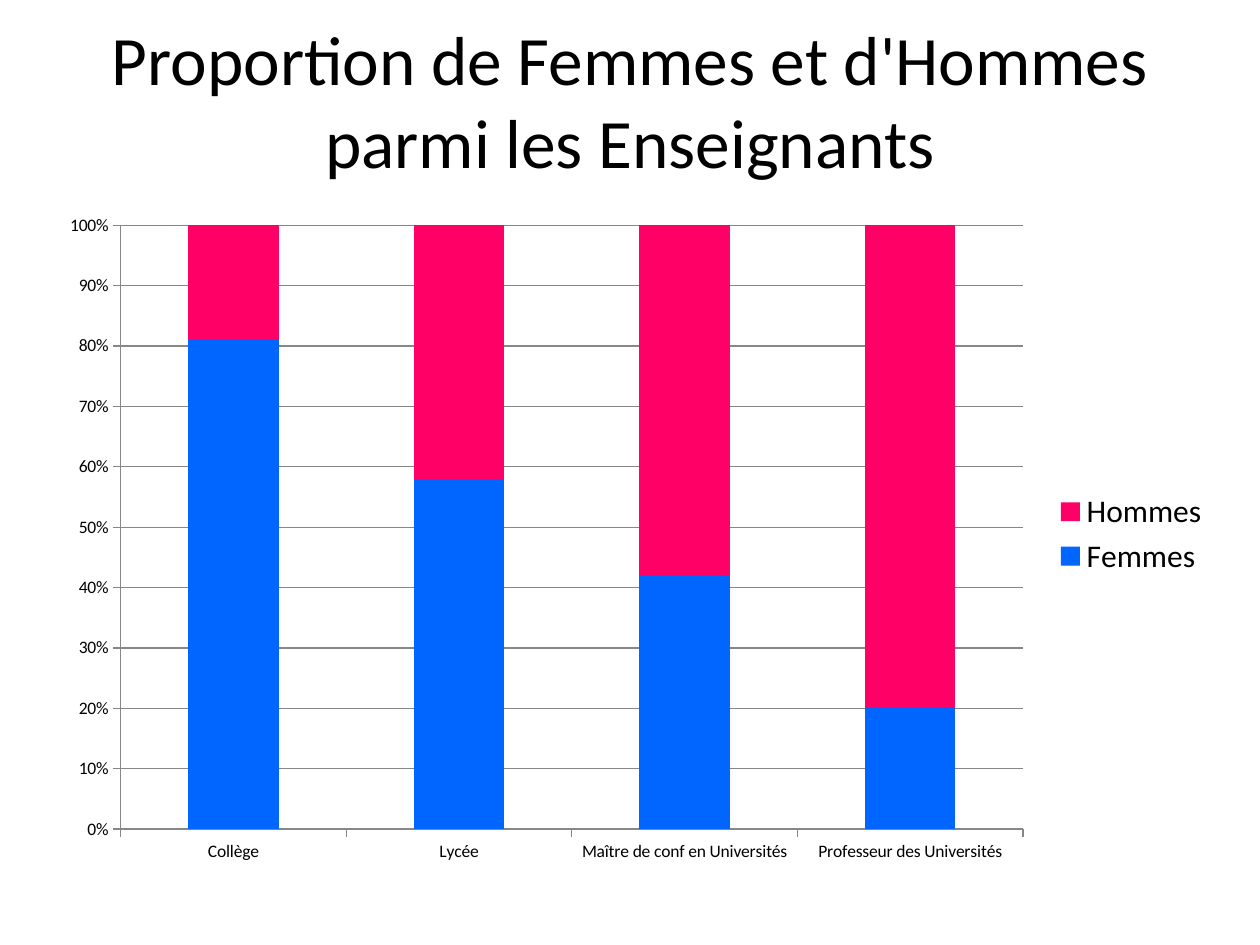
from lxml import etree
from pptx import Presentation
from pptx.chart.data import CategoryChartData
from pptx.dml.color import RGBColor
from pptx.enum.chart import XL_CHART_TYPE as ChartType, XL_LEGEND_POSITION as LegendPosition
from pptx.enum.chart import XL_TICK_MARK as TickMark
from pptx.enum.text import MSO_ANCHOR as Anchor, PP_ALIGN as Align
from pptx.oxml.ns import qn
from pptx.util import Inches, Pt


def color(value):
    """Turn a hex string into a colour."""
    return RGBColor.from_string(value)


class SlideBuilder:
    """Hold the style and the current slide; lengths are shares of its size."""

    font_name = "Calibri"
    ink = "000000"
    axis_line = "878787"

    def __init__(self, presentation):
        self.width = presentation.slide_width
        self.height = presentation.slide_height
        self.slide = presentation.slides.add_slide(presentation.slide_layouts[6])

    def box(self, left, top, width, height):
        """Convert shares of the slide into lengths."""
        return (int(left * self.width), int(top * self.height),
                int(width * self.width), int(height * self.height))

    def style_font(self, font, size):
        """Apply the common typeface and ink at the given size."""
        font.name, font.size = self.font_name, Pt(size)
        font.color.rgb = color(self.ink)

    def title(self, text, area, size):
        """Add a centred, wrapping title."""
        text_frame = self.slide.shapes.add_textbox(*self.box(*area)).text_frame
        text_frame.word_wrap = True
        text_frame.vertical_anchor = Anchor.MIDDLE
        text_frame.text = text
        paragraph = text_frame.paragraphs[0]
        paragraph.alignment = Align.CENTER
        self.style_font(paragraph.runs[0].font, size)

    def stacked_chart(self, categories, series, area, plot_area):
        """Add a 100% stacked column chart from (name, values, fill) rows."""
        data = CategoryChartData(number_format="0")
        data.categories = categories
        for name, values, _ in series:
            data.add_series(name, values)
        chart = self.slide.shapes.add_chart(
            ChartType.COLUMN_STACKED_100, *self.box(*area), data).chart
        self.style_font(chart.font, 10)
        chart.has_title = False
        chart.has_legend = True
        chart.legend.position = LegendPosition.RIGHT
        chart.legend.include_in_layout = False
        self.style_font(chart.legend.font, 18)
        plot = chart.plots[0]
        plot.gap_width, plot.overlap = 150, 100
        plot.vary_by_categories = False
        for drawn, (_, _, fill) in zip(plot.series, series):
            drawn.format.fill.solid()
            drawn.format.fill.fore_color.rgb = color(fill)
        self.style_axes(chart)
        self.place_plot(chart, plot_area)

    def style_axes(self, chart):
        """Draw thin grey axes and gridlines with percentage labels."""
        value_axis, category_axis = chart.value_axis, chart.category_axis
        value_axis.has_major_gridlines = True
        value_axis.minimum_scale, value_axis.maximum_scale = 0, 1
        value_axis.major_unit = 0.1
        value_axis.tick_labels.number_format = "0%"
        value_axis.tick_labels.number_format_is_linked = False
        for axis in (value_axis, category_axis):
            axis.major_tick_mark = TickMark.OUTSIDE
        for part in (value_axis, category_axis, value_axis.major_gridlines):
            part.format.line.color.rgb = color(self.axis_line)
            part.format.line.width = Pt(0.75)

    def place_plot(self, chart, plot_area):
        """Fix the inner plot area as shares of the chart."""
        element = chart.plots[0]._element.getparent()
        layout = element.find(qn("c:layout"))
        if layout is None:
            layout = etree.Element(qn("c:layout"))
            element.insert(0, layout)
        manual = etree.SubElement(layout, qn("c:manualLayout"))
        settings = [("layoutTarget", "inner"), ("xMode", "edge"), ("yMode", "edge")]
        settings += zip("xywh", plot_area)
        for tag, value in settings:
            etree.SubElement(manual, qn(f"c:{tag}")).set("val", str(value))


def main():
    """Build and save the slide."""
    presentation = Presentation()
    presentation.slide_width, presentation.slide_height = Inches(10), Inches(7.5)
    builder = SlideBuilder(presentation)
    builder.title("Proportion de Femmes et d'Hommes parmi les Enseignants",
                  (0.05, 0.02, 0.9, 0.17), 39.6)
    women = [81, 58, 42, 20]
    men = [100 - share for share in women]
    builder.stacked_chart(
        ["Collège", "Lycée", "Maître de conf en Universités",
         "Professeur des Universités"],
        [("Femmes", women, "0066FF"), ("Hommes", men, "FF0066")],
        (0.04, 0.21, 0.93, 0.71), (0.06, 0.04, 0.77, 0.9))
    presentation.save("out.pptx")


if __name__ == "__main__":
    main()
